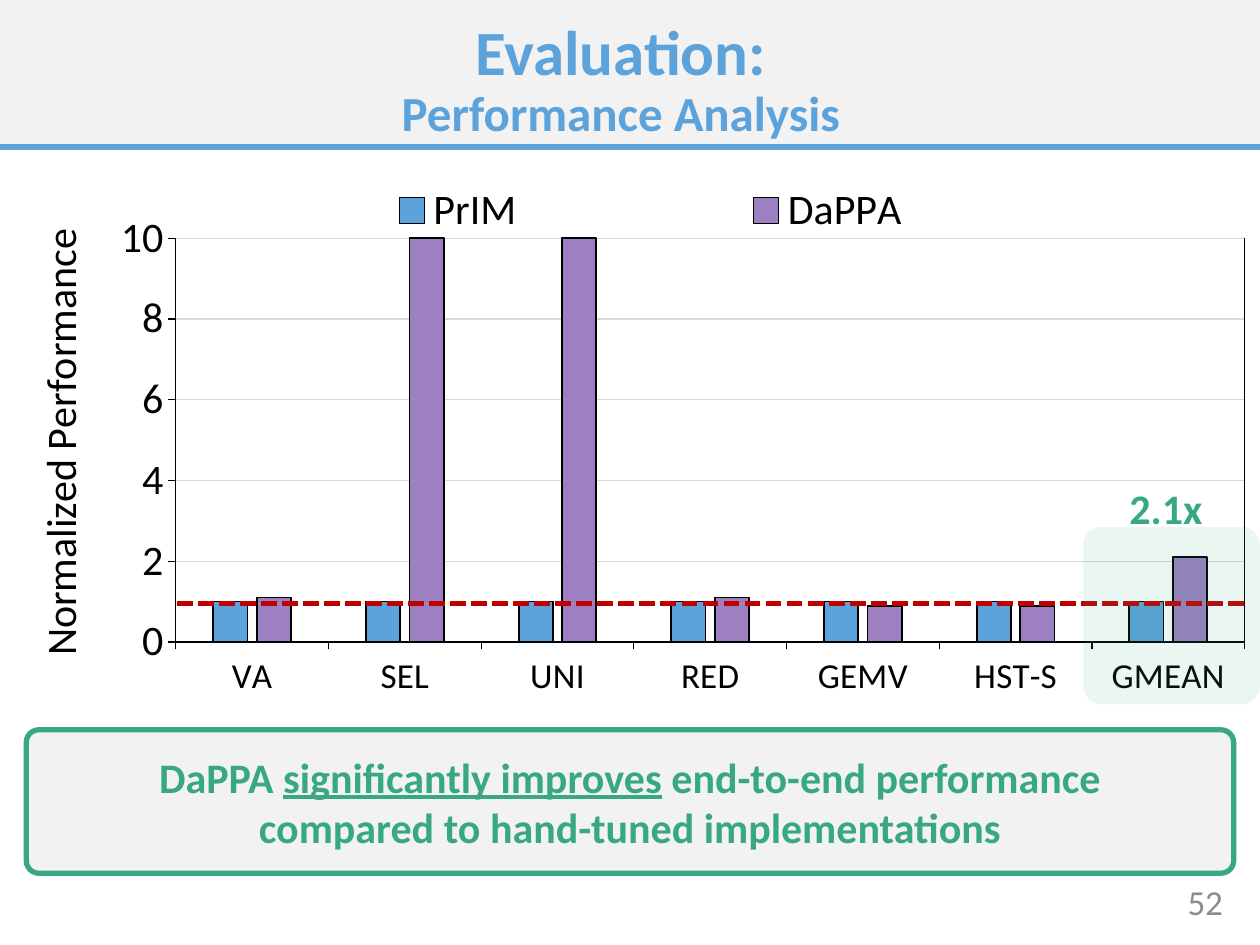
from lxml import etree
from pptx import Presentation
from pptx.chart.data import CategoryChartData
from pptx.dml.color import RGBColor
from pptx.enum.chart import XL_CHART_TYPE, XL_LEGEND_POSITION, XL_TICK_MARK
from pptx.enum.dml import MSO_LINE
from pptx.enum.shapes import MSO_CONNECTOR, MSO_SHAPE
from pptx.enum.text import MSO_ANCHOR, PP_ALIGN
from pptx.oxml import parse_xml
from pptx.oxml.ns import nsdecls, qn
from pptx.util import Pt

BLUE, GREEN, GRAY, BLACK = "5CA2DB", "38A881", "F2F2F2", "000000"


def color(code):
    return RGBColor.from_string(code)


def write(shape, lines, size, ink, bold=True, align=PP_ALIGN.CENTER,
          anchor=MSO_ANCHOR.MIDDLE, under=""):
    """Fill a shape with one paragraph per line; `under` is underlined."""
    frame = shape.text_frame
    frame.word_wrap = True
    frame.vertical_anchor = anchor
    for i, line in enumerate(lines):
        para = frame.add_paragraph() if i else frame.paragraphs[0]
        para.alignment = align
        for part in line.partition(under) if under else [line]:
            if part:
                run = para.add_run()
                run.text = part
                font = run.font
                font.name, font.size, font.bold = "Calibri", Pt(size), bold
                font.color.rgb = color(ink)
                font.underline = True if part == under else None
    return frame


deck = Presentation()
deck.slide_width, deck.slide_height = Pt(720), Pt(540)
slide = deck.slides.add_slide(deck.slide_layouts[6])
shapes = slide.shapes

# Header band, page number and title
band = shapes.add_shape(MSO_SHAPE.RECTANGLE, 0, 0, Pt(720), Pt(84))
band.shadow.inherit = False
band.fill.solid()
band.fill.fore_color.rgb = color(GRAY)
band.line.fill.background()

page = shapes.add_textbox(Pt(628), Pt(500.5), Pt(78), Pt(29))
write(page, ["52"], 20, "8C8C8C", bold=False, align=PP_ALIGN.RIGHT)

title = shapes.add_textbox(Pt(13), Pt(10), Pt(700.5), Pt(73))
head = write(title, ["Evaluation:", "Performance Analysis"], 36, BLUE)
head.paragraphs[1].runs[0].font.size = Pt(28)
for para in head.paragraphs:
    para.line_spacing = 0.9
head.paragraphs[0].alignment = PP_ALIGN.CENTER
etree.ElementBase.set(head.paragraphs[0]._p.get_or_add_pPr(), "marR", str(Pt(17)))

# Chart
data = CategoryChartData(number_format="General")
data.categories = ["VA", "SEL", "UNI", "RED", "GEMV", "HST-S", "GMEAN"]
data.add_series("PrIM", [1] * 7)
data.add_series("DaPPA", [1.1, 10, 10, 1.1, 0.9, 0.9, 2.1])
chart = shapes.add_chart(XL_CHART_TYPE.COLUMN_CLUSTERED, Pt(-8), Pt(91.5),
                         Pt(728), Pt(360.5), data).chart
chart.has_title = False
chart.font.name, chart.font.size = "Calibri", Pt(24)
chart.font.color.rgb = color(BLACK)

plot = chart.plots[0]
plot.gap_width, plot.overlap = 219, -27
plot.vary_by_categories = False
for series, code in zip(plot.series, [BLUE, "9C80C1"]):
    series.format.fill.solid()
    series.format.fill.fore_color.rgb = color(code)
    series.format.line.color.rgb = color(BLACK)
    series.format.line.width = Pt(1)

cats, vals = chart.category_axis, chart.value_axis
for axis, size in [(cats, 20), (vals, 24)]:
    axis.major_tick_mark = XL_TICK_MARK.OUTSIDE
    axis.format.line.color.rgb = color(BLACK)
    axis.format.line.width = Pt(0.75)
    font = axis.tick_labels.font
    font.name, font.size = "Calibri", Pt(size)
    font.color.rgb = color(BLACK)
vals.minimum_scale, vals.maximum_scale, vals.major_unit = 0, 10, 2
grid = vals.major_gridlines.format.line
grid.color.rgb, grid.width = color("D9D9D9"), Pt(0.75)

label = vals.axis_title.text_frame.paragraphs[0].add_run()
label.text = "Normalized Performance"
label.font.name, label.font.size, label.font.bold = "Calibri", Pt(24), False
label.font.color.rgb = color(BLACK)

chart.has_legend = True
chart.legend.position = XL_LEGEND_POSITION.BOTTOM
chart.legend.include_in_layout = False

# Manual places, as shares of the chart's width and height
area = chart._chartSpace.chart.plotArea
name = vals.axis_title._element
key = chart.legend._element
for part, spots, inner in [
    (area, {"x": 0.149, "y": 0.124, "w": 0.839, "h": 0.64}, True),
    (name, {"x": 0.03, "y": 0.097}, False),
    (key, {"x": 0.149, "y": 0.03, "w": 0.745, "h": 0.1}, False),
]:
    for old in part.findall(qn("c:layout")):
        part.remove(old)
    target = '<c:layoutTarget val="inner"/>' if inner else ""
    modes = "".join(f'<c:{k}Mode val="edge"/>' for k in "xy")
    sizes = "".join(f'<c:{k} val="{v}"/>' for k, v in spots.items())
    layout = parse_xml(f'<c:layout {nsdecls("c")}><c:manualLayout>{target}'
                       f'{modes}{sizes}</c:manualLayout></c:layout>')
    part.insert(0 if inner else 1, layout)

# Header rule, right edge of the plot, baseline at 1
for x1, y1, x2, y2, code, width, dash in [
    (0, 84, 720, 84, BLUE, 3, None),
    (711, 136.2, 711, 367, BLACK, 0.75, None),
    (101, 345, 713.5, 345, "C00000", 3, MSO_LINE.SQUARE_DOT),
]:
    rule = shapes.add_connector(MSO_CONNECTOR.STRAIGHT, Pt(x1), Pt(y1), Pt(x2), Pt(y2))
    rule.line.color.rgb, rule.line.width = color(code), Pt(width)
    rule.line.dash_style = dash
    etree.SubElement(rule._element.spPr, qn("a:effectLst"))

# Highlight of the mean, and the takeaway
for x, y, w, h, bend, code in [
    (619, 301, 101, 101.5, 0.105, GREEN),
    (15, 417, 690, 82, 0.089, GRAY),
]:
    box = shapes.add_shape(MSO_SHAPE.ROUNDED_RECTANGLE, Pt(x), Pt(y), Pt(w), Pt(h))
    box.shadow.inherit = False
    box.adjustments[0] = bend
    box.fill.solid()
    box.fill.fore_color.rgb = color(code)
    if code == GREEN:
        box.line.fill.background()
        tint = box._element.spPr.find(qn("a:solidFill"))[0]
        etree.SubElement(tint, qn("a:alpha"), val="10000")
    else:
        box.line.color.rgb, box.line.width = color(GREEN), Pt(3)
        write(box, ["DaPPA significantly improves end-to-end performance",
                    "compared to hand-tuned implementations"],
              24, GREEN, under="significantly improves")

gain = shapes.add_textbox(Pt(619), Pt(272), Pt(94.5), Pt(36))
write(gain, ["2.1x"], 24, GREEN, anchor=MSO_ANCHOR.TOP)

deck.save("out.pptx")
